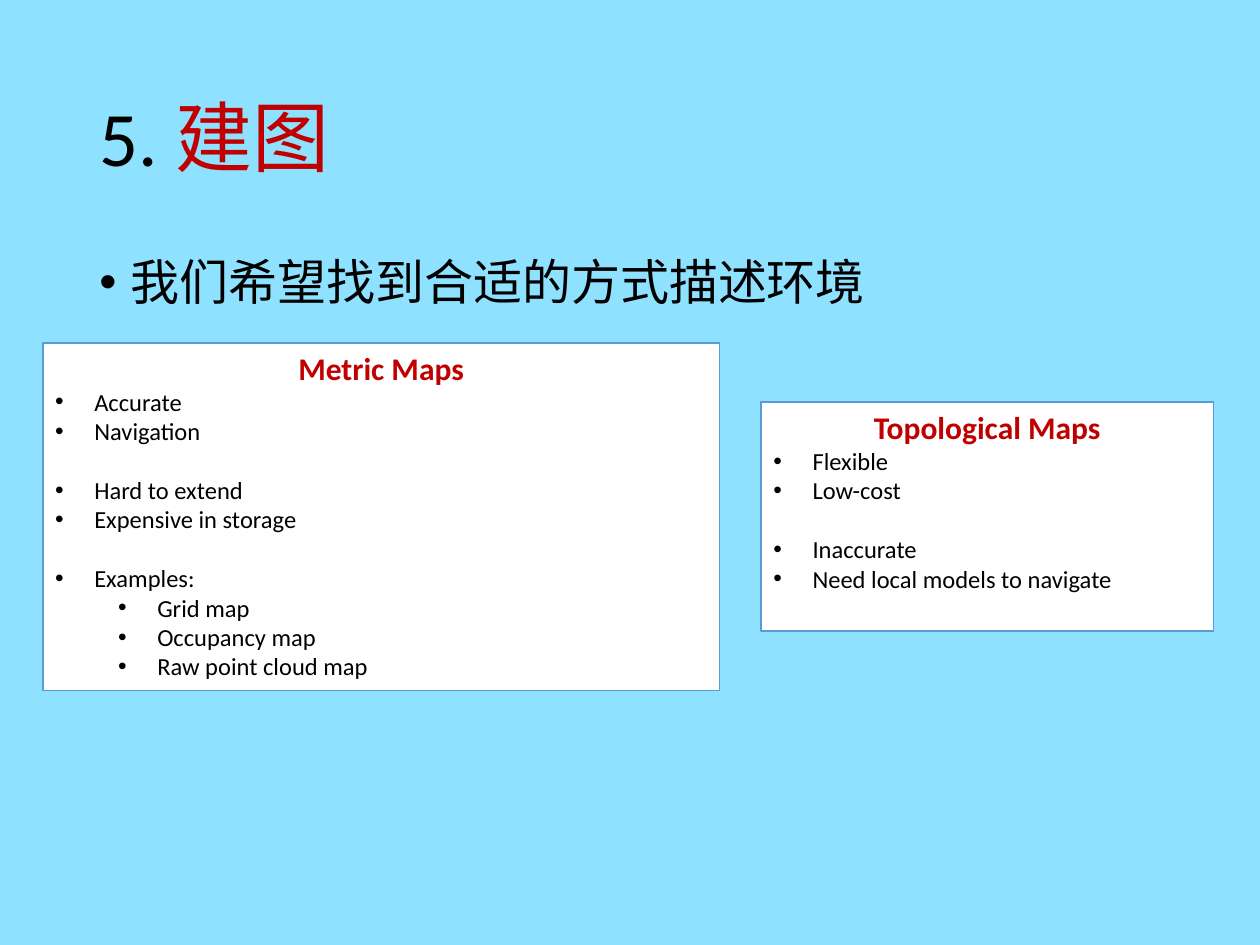
from lxml import etree
from pptx import Presentation
from pptx import util as u
from pptx.dml.color import RGBColor
from pptx.enum import shapes, text
from pptx.oxml.ns import qn

FONT = "Calibri"
BLACK, RED, WHITE, BLUE, SKY = "000000", "C00000", "FFFFFF", "5B9BD5", "8FE2FF"
GROUP_GAP = 16.8

METRIC_GROUPS = [
    [("Accurate", 0), ("Navigation", 0)],
    [("Hard to extend", 0), ("Expensive in storage", 0)],
    [("Examples:", 0), ("Grid map", 1), ("Occupancy map", 1), ("Raw point cloud map", 1)],
]
TOPOLOGICAL_GROUPS = [
    [("Flexible", 0), ("Low-cost", 0)],
    [("Inaccurate", 0), ("Need local models to navigate", 0)],
]


def color(value):
    return RGBColor.from_string(value)


def add_run(paragraph, words, size, tone=BLACK, bold=False):
    run = paragraph.add_run()
    run.text = words
    run.font.name = FONT
    run.font.size = u.Pt(size)
    run.font.bold = bold
    run.font.color.rgb = color(tone)


def add_bullet(paragraph, margin, hanging):
    properties = paragraph._p.get_or_add_pPr()
    properties.set("marL", str(u.Inches(margin)))
    properties.set("indent", str(-u.Inches(hanging)))
    etree.SubElement(properties, qn("a:buFont")).set("typeface", "Arial")
    etree.SubElement(properties, qn("a:buChar")).set("char", "•")


def add_text_box(slide, bounds, anchor):
    box = slide.shapes.add_textbox(*map(u.Inches, bounds))
    frame = box.text_frame
    frame.word_wrap = True
    frame.vertical_anchor = anchor
    paragraph = frame.paragraphs[0]
    paragraph.line_spacing = 0.9
    return paragraph


def add_map_card(slide, bounds, heading, groups):
    card = slide.shapes.add_shape(shapes.MSO_SHAPE.RECTANGLE, *map(u.Inches, bounds))
    card.shadow.inherit = False
    card.fill.solid()
    card.fill.fore_color.rgb = color(WHITE)
    card.line.color.rgb = color(BLUE)
    card.line.width = u.Pt(1)
    frame = card.text_frame
    frame.word_wrap = True
    frame.vertical_anchor = text.MSO_ANCHOR.TOP
    title = frame.paragraphs[0]
    title.alignment = text.PP_ALIGN.CENTER
    add_run(title, heading, 18, RED, True)
    for group_index, group in enumerate(groups):
        for item_index, (words, level) in enumerate(group):
            paragraph = frame.add_paragraph()
            paragraph.level = level
            paragraph.alignment = text.PP_ALIGN.LEFT
            add_bullet(paragraph, 0.31 + 0.5 * level, 0.31)
            if group_index and not item_index:
                paragraph.space_before = u.Pt(GROUP_GAP)
            add_run(paragraph, words, 14)


def main():
    presentation = Presentation()
    presentation.slide_width = u.Inches(10)
    presentation.slide_height = u.Inches(7.5)
    slide = presentation.slides.add_slide(presentation.slide_layouts[6])
    slide.background.fill.solid()
    slide.background.fill.fore_color.rgb = color(SKY)

    title = add_text_box(slide, (0.69, 0.4, 8.62, 1.45), text.MSO_ANCHOR.MIDDLE)
    add_run(title, "5. ", 44)
    add_run(title, "建图", 44, RED)

    body = add_text_box(slide, (0.69, 2, 8.62, 4.76), text.MSO_ANCHOR.TOP)
    add_bullet(body, 0.25, 0.25)
    add_run(body, "我们希望找到合适的方式描述环境", 28)

    add_map_card(slide, (0.34, 2.72, 5.37, 2.76), "Metric Maps", METRIC_GROUPS)
    add_map_card(slide, (6.04, 3.19, 3.59, 1.82), "Topological Maps", TOPOLOGICAL_GROUPS)
    presentation.save("out.pptx")


if __name__ == "__main__":
    main()
